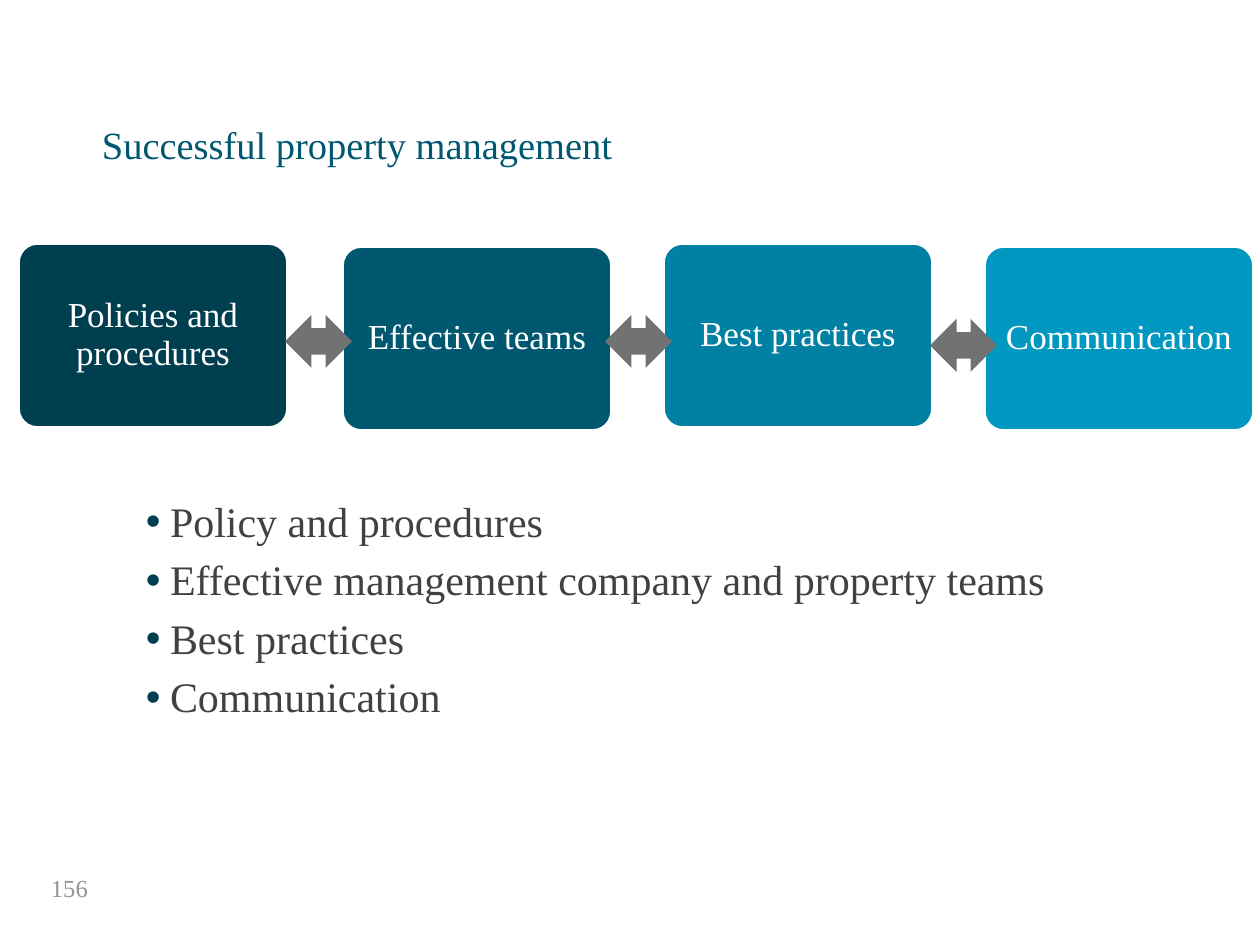
"""Build the property management slide: four linked boxes above a bullet list."""
from lxml.etree import SubElement
from pptx import Presentation
from pptx.dml.color import RGBColor as RGB
from pptx.enum.shapes import MSO_SHAPE as SHAPE
from pptx.enum.text import MSO_ANCHOR as ANCHOR, PP_ALIGN as ALIGN
from pptx.oxml.ns import qn
from pptx.util import Pt

NAVY, TEAL = RGB(0x00, 0x3F, 0x50), RGB(0x00, 0x58, 0x70)
BLUE, SKY = RGB(0x00, 0x81, 0xA4), RGB(0x00, 0x97, 0xC0)
WHITE, DARK = RGB(0xFF, 0xFF, 0xFF), RGB(0x41, 0x40, 0x42)
ARROW_GRAY, NUMBER_GRAY = RGB(0x70, 0x73, 0x72), RGB(0x93, 0x93, 0x93)
FONT = "Times New Roman"

TITLE = "Successful property management"
STEPS = [
    ("Policies and procedures", NAVY, 19, 244),
    ("Effective teams", TEAL, 343, 247),
    ("Best practices", BLUE, 664, 244),
    ("Communication", SKY, 985, 247),
]
ARROWS = [(285, 315), (605, 315), (930, 319)]
BULLETS = [
    "Policy and procedures",
    "Effective management company and property teams",
    "Best practices",
    "Communication",
]
NUMBER = "156"
STEP_SIZE, ARROW_SIZE = (268, 183), (67, 53)


def px(n):
    return round(n * 914400 / 126)


def write(sp, lines, size, color, anchor=ANCHOR.TOP, align=ALIGN.LEFT,
          spacing=0.9, bullet=None, inset=(13, 6)):
    tf = sp.text_frame
    side, end = map(px, inset)
    frame = dict(word_wrap=True, vertical_anchor=anchor, margin_left=side,
                 margin_right=side, margin_top=end, margin_bottom=end)
    for name, value in frame.items():
        setattr(tf, name, value)
    for i, line in enumerate(lines):
        p = tf.paragraphs[0] if i == 0 else tf.add_paragraph()
        p.text = line
        para = dict(alignment=align, line_spacing=spacing,
                    space_before=Pt(7.5 if i else 0))
        for name, value in para.items():
            setattr(p, name, value)
        if bullet:
            add_bullet(p, bullet)
        font = p.runs[0].font
        for name, value in dict(name=FONT, size=Pt(size)).items():
            setattr(font, name, value)
        font.color.rgb = color


def add_bullet(p, color):
    pPr = p._p.get_or_add_pPr()
    pPr.set("marL", str(px(24)))
    pPr.set("indent", str(-px(24)))
    clr = SubElement(pPr, qn("a:buClr"))
    SubElement(clr, qn("a:srgbClr"), val=str(color))
    SubElement(pPr, qn("a:buFont"), typeface="Arial")
    SubElement(pPr, qn("a:buChar"), char="•")


def add_shape(s, kind, place, fill):
    sp = s.shapes.add_shape(kind, *map(px, place))
    sp.shadow.inherit = False
    sp.fill.solid()
    sp.fill.fore_color.rgb = fill
    sp.line.fill.background()
    return sp


def main():
    prs = Presentation()
    prs.slide_width, prs.slide_height = px(1260), px(945)
    s = prs.slides.add_slide(prs.slide_layouts[5])

    title = s.shapes.title
    place = dict(left=89, top=120, width=648, height=53)
    for name, value in place.items():
        setattr(title, name, px(value))
    write(title, [TITLE], 22, TEAL)

    body = s.shapes.add_textbox(*map(px, (133, 495, 987, 600)))
    write(body, BULLETS, 24, DARK, bullet=NAVY)

    for label, fill, x, y in STEPS:
        sp = add_shape(s, SHAPE.ROUNDED_RECTANGLE, (x, y, *STEP_SIZE), fill)
        sp.adjustments[0] = 0.1
        sp.line.color.rgb = WHITE
        sp.line.width = Pt(1)
        write(sp, [label], 20, WHITE, ANCHOR.MIDDLE, ALIGN.CENTER,
              inset=(11, 11))

    for x, y in ARROWS:
        add_shape(s, SHAPE.LEFT_RIGHT_ARROW, (x, y, *ARROW_SIZE), ARROW_GRAY)

    number = s.shapes.add_textbox(*map(px, (38, 863, 284, 50)))
    write(number, [NUMBER], 14, NUMBER_GRAY, ANCHOR.MIDDLE, spacing=1.0)

    prs.save("out.pptx")


if __name__ == "__main__":
    main()
